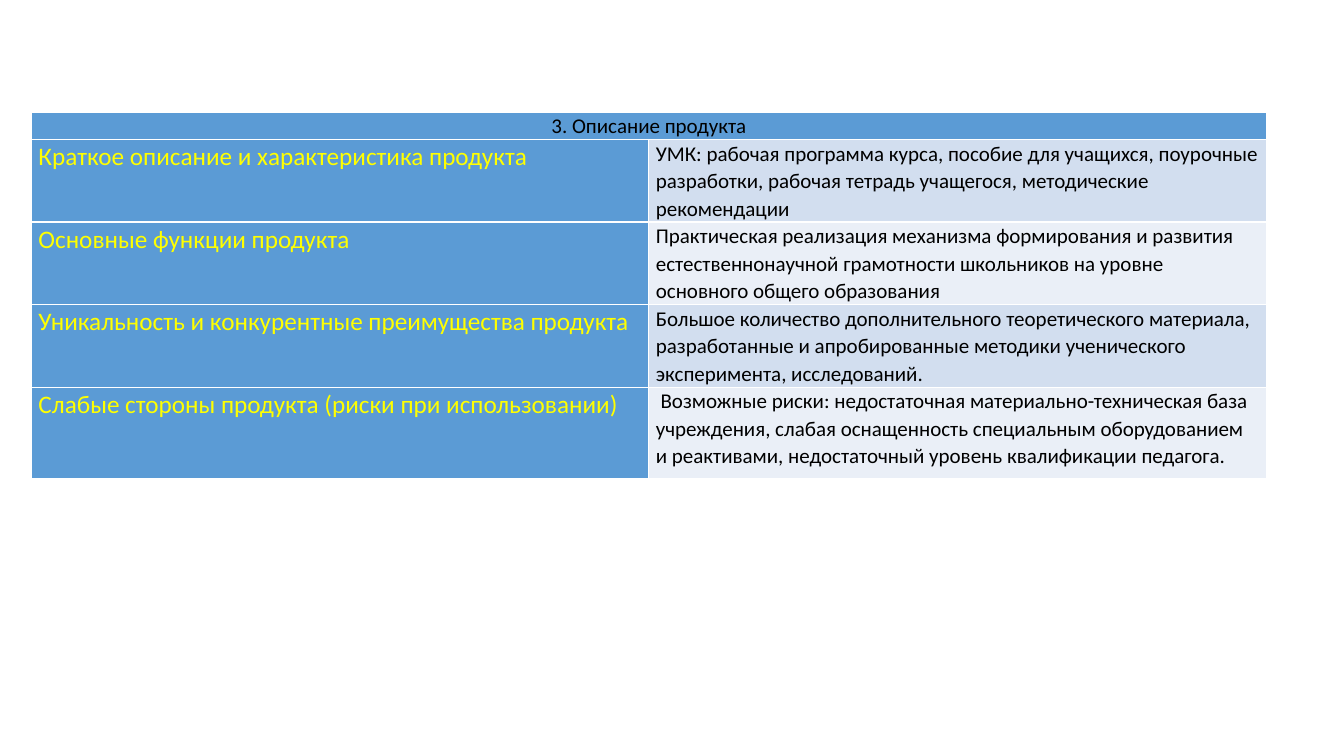
from dataclasses import dataclass

from lxml.etree import SubElement
from pptx import Presentation
from pptx.dml.color import RGBColor as Rgb
from pptx.enum.text import PP_ALIGN as Align
from pptx.oxml.ns import qn
from pptx.util import Pt


@dataclass(frozen=True)
class Theme:
    font: str = "Calibri"
    accent: str = "5B9BD5"
    bands: tuple = ("D2DEEF", "EAEFF7")
    border: str = "FFFFFF"
    label_color: str = "FFFF00"
    text_color: str = "000000"
    label_size: int = 18
    text_size: int = 15


THEME = Theme()
TITLE = "3. Описание продукта"
ROWS = [
    ("Краткое описание и характеристика продукта",
     "УМК: рабочая программа курса, пособие для учащихся, поурочные разработки, "
     "рабочая тетрадь учащегося, методические рекомендации"),
    ("Основные функции продукта",
     "Практическая реализация механизма формирования и развития "
     "естественнонаучной грамотности школьников на уровне основного общего образования"),
    ("Уникальность и конкурентные преимущества продукта",
     "Большое количество дополнительного теоретического материала, разработанные "
     "и апробированные методики ученического эксперимента, исследований."),
    ("Слабые стороны продукта (риски при использовании)",
     " Возможные риски: недостаточная материально-техническая база учреждения, "
     "слабая оснащенность специальным оборудованием и реактивами, "
     "недостаточный уровень квалификации педагога."),
]
ROW_HEIGHTS = (17.5, 49, 49, 49, 65)


def set_borders(cell, width=1):
    properties = cell._tc.get_or_add_tcPr()
    for side in ("a:lnL", "a:lnR", "a:lnT", "a:lnB"):
        line = SubElement(properties, qn(side), w=str(Pt(width)))
        fill = SubElement(line, qn("a:solidFill"))
        SubElement(fill, qn("a:srgbClr"), val=THEME.border)


def fill_cell(cell, text, background, color, size, align=Align.LEFT):
    set_borders(cell)
    cell.fill.solid()
    cell.fill.fore_color.rgb = Rgb.from_string(background)
    margins = {"margin_left": 5, "margin_right": 5, "margin_top": 0, "margin_bottom": 0}
    for name, value in margins.items():
        setattr(cell, name, Pt(value))
    paragraph = cell.text_frame.paragraphs[0]
    paragraph.alignment = align
    paragraph.line_spacing = 1.07
    run = paragraph.add_run()
    run.text = text
    for name, value in {"name": THEME.font, "size": Pt(size), "bold": False}.items():
        setattr(run.font, name, value)
    run.font.color.rgb = Rgb.from_string(color)


def add_description_table(slide, left, top, width):
    frame = slide.shapes.add_table(len(ROW_HEIGHTS), 2, Pt(left), Pt(top),
                                   Pt(width), Pt(sum(ROW_HEIGHTS)))
    table = frame.table
    for column in table.columns:
        column.width = Pt(width / 2)
    for row, height in zip(table.rows, ROW_HEIGHTS):
        row.height = Pt(height)

    header = table.cell(0, 0)
    header.merge(table.cell(0, 1))
    fill_cell(header, TITLE, THEME.accent, THEME.text_color, THEME.text_size, Align.CENTER)
    for index, (label, description) in enumerate(ROWS):
        fill_cell(table.cell(index + 1, 0), label, THEME.accent,
                  THEME.label_color, THEME.label_size)
        fill_cell(table.cell(index + 1, 1), description, THEME.bands[index % 2],
                  THEME.text_color, THEME.text_size)


def main():
    presentation = Presentation()
    presentation.slide_width, presentation.slide_height = Pt(960), Pt(540)
    slide = presentation.slides.add_slide(presentation.slide_layouts[6])
    add_description_table(slide, left=22.5, top=80, width=882)
    presentation.save("out.pptx")


if __name__ == "__main__":
    main()
